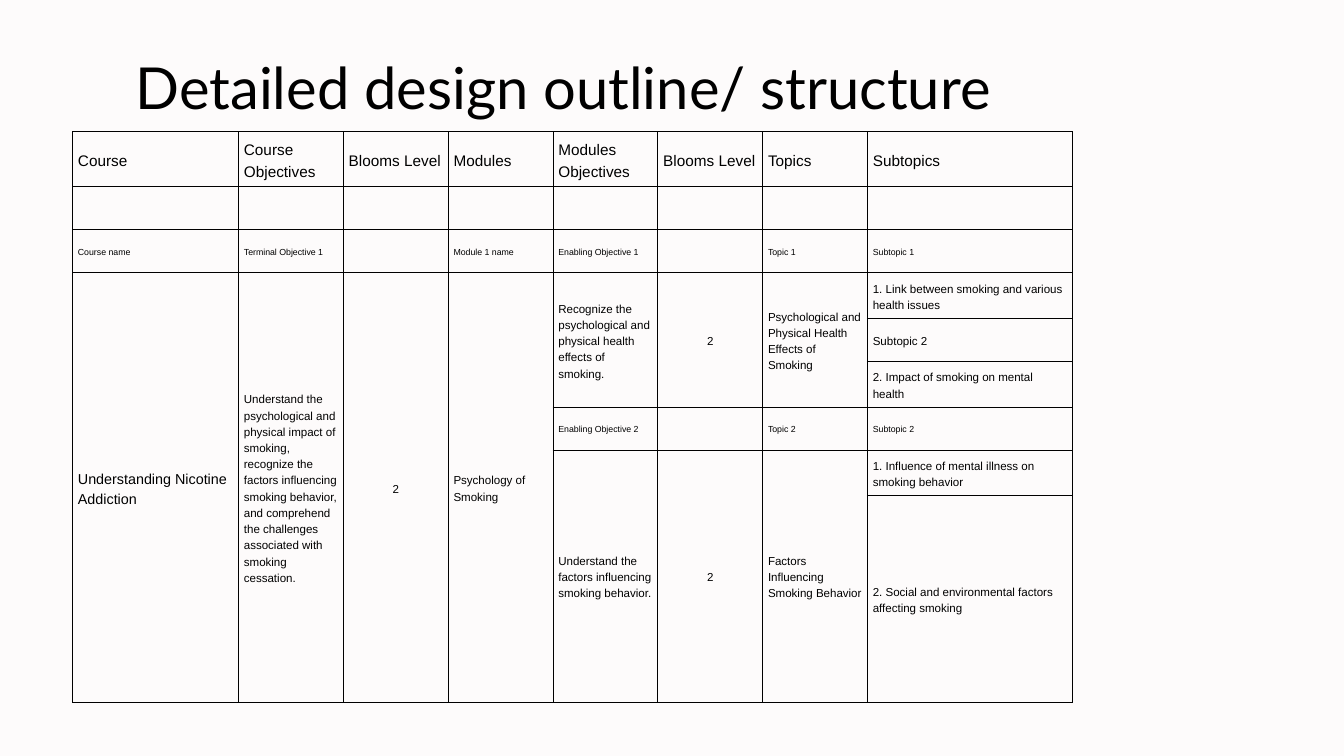
from lxml.etree import SubElement
from pptx import Presentation
from pptx.dml.color import RGBColor
from pptx.enum.text import MSO_ANCHOR, MSO_AUTO_SIZE, PP_ALIGN
from pptx.oxml.ns import qn
from pptx.util import Inches, Pt

BLACK = "000000"
BACKGROUND = "FDFBFB"
COLUMN_WIDTHS = [2.47] + [1.56] * 6 + [3.05]
ROW_HEIGHTS = [0.82, 0.64, 0.64, 0.68, 0.64, 0.68, 0.64, 0.68, 0.64, 0.64, 1.79]

# Text style: font size and line spacing in points
HEADER = (16.4, 23)
LABEL = (9.4, 13.2)
COURSE = (15.4, 21.6)
BODY = (12.4, 17.4)

# Each entry: row, first column, style, texts from left to right
ROW_TEXTS = [
    (0, 0, HEADER, ["Course", "Course Objectives", "Blooms Level", "Modules",
                    "Modules Objectives", "Blooms Level", "Topics", "Subtopics"]),
    (2, 0, LABEL, ["Course name", "Terminal Objective 1", "", "Module 1 name",
                   "Enabling Objective 1", "", "Topic 1", "Subtopic 1"]),
    (3, 0, COURSE, ["Understanding Nicotine Addiction"]),
    (3, 1, BODY, [
        "Understand the psychological and physical impact of smoking, recognize the "
        "factors influencing smoking behavior, and comprehend the challenges "
        "associated with smoking cessation.",
        "2", "Psychology of Smoking",
        "Recognize the psychological and physical health effects of smoking.",
        "2", "Psychological and Physical Health Effects of Smoking",
        "1. Link between smoking and various health issues"]),
    (4, 7, BODY, ["Subtopic 2"]),
    (5, 7, BODY, ["2. Impact of smoking on mental health"]),
    (6, 4, LABEL, ["Enabling Objective 2", "", "Topic 2", "Subtopic 2"]),
    (7, 4, BODY, ["Understand the factors influencing smoking behavior.", "2",
                  "Factors Influencing Smoking Behavior",
                  "1. Influence of mental illness on smoking behavior"]),
    (8, 7, BODY, ["2. Social and environmental factors affecting smoking"]),
]

# Each entry: first row, last row, columns merged downwards
MERGES = [(3, 10, range(0, 4)), (3, 5, range(4, 7)),
          (7, 10, range(4, 7)), (8, 10, range(7, 8))]


def color(value):
    return RGBColor.from_string(value)


def add_text(para, text, font, size, spacing, align):
    para.alignment = align
    para.line_spacing = Pt(spacing)
    span = para.add_run()
    span.text = text
    span.font.name = font
    span.font.size = Pt(size)
    span.font.color.rgb = color(BLACK)


def add_borders(cell, width=1.17):
    properties = cell._tc.get_or_add_tcPr()
    for index, side in enumerate(("lnL", "lnR", "lnT", "lnB")):
        line = SubElement(properties, qn(f"a:{side}"), w=str(int(Pt(width))))
        fill = SubElement(line, qn("a:solidFill"))
        SubElement(fill, qn("a:srgbClr"), val=BLACK)
        properties.insert(index, line)


def add_title(page, left, top, width, height):
    title = page.shapes.title
    title.left, title.top = Inches(left), Inches(top)
    title.width, title.height = Inches(width), Inches(height)
    frame = title.text_frame
    frame.word_wrap = True
    frame.auto_size = MSO_AUTO_SIZE.NONE
    frame.vertical_anchor = MSO_ANCHOR.TOP
    frame.margin_left = frame.margin_right = 0
    frame.margin_top = frame.margin_bottom = 0
    add_text(frame.paragraphs[0], "Detailed design outline/ structure",
             "Lato", 62, 86.8, PP_ALIGN.CENTER)


def add_outline_table(page, left, top, width, height):
    table = page.shapes.add_table(
        len(ROW_HEIGHTS), len(COLUMN_WIDTHS),
        Inches(left), Inches(top), Inches(width), Inches(height)).table
    table.first_row = table.horz_banding = False
    for column, size in zip(table.columns, COLUMN_WIDTHS):
        column.width = Inches(size)
    for row, size in zip(table.rows, ROW_HEIGHTS):
        row.height = Inches(size)

    # Plain cells with black borders
    for cell in table.iter_cells():
        cell.fill.background()
        add_borders(cell)
        cell.vertical_anchor = MSO_ANCHOR.MIDDLE
        cell.margin_left = cell.margin_right = Inches(0.08)
        cell.margin_top = cell.margin_bottom = Inches(0.08)

    for first, last, columns in MERGES:
        for column in columns:
            table.cell(first, column).merge(table.cell(last, column))

    # Cell texts, with the levels centred
    for row, start, (size, spacing), texts in ROW_TEXTS:
        for column, text in enumerate(texts, start):
            if text:
                align = PP_ALIGN.CENTER if text.isdigit() else PP_ALIGN.LEFT
                para = table.cell(row, column).text_frame.paragraphs[0]
                add_text(para, text, "Arial", size, spacing, align)


def main():
    deck = Presentation()
    deck.slide_width, deck.slide_height = Inches(20), Inches(11.25)
    page = deck.slides.add_slide(deck.slide_layouts[5])
    page.background.fill.solid()
    page.background.fill.fore_color.rgb = color(BACKGROUND)
    add_outline_table(page, 1.08, 1.96, 14.86, 8.47)
    add_title(page, 1.26, 0.59, 14.25, 1.15)
    deck.save("out.pptx")


if __name__ == "__main__":
    main()
